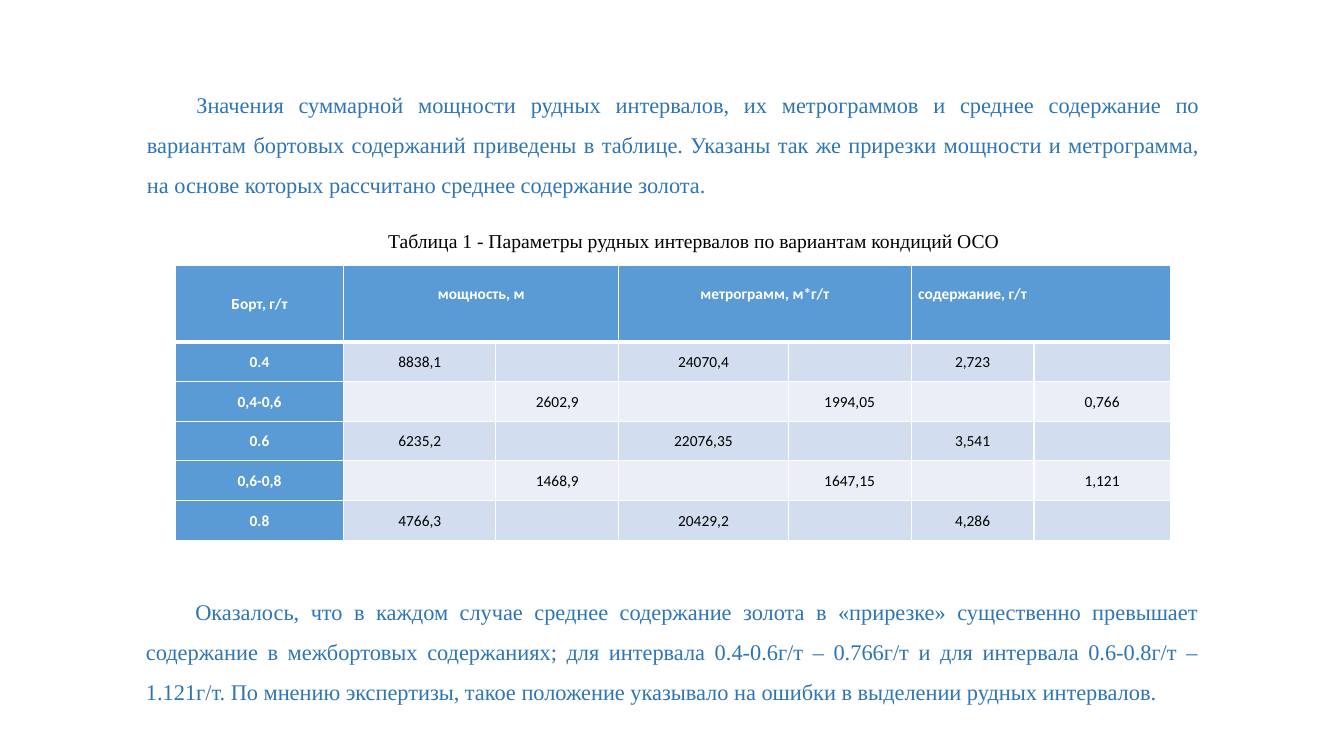
from lxml import etree
from pptx import Presentation
from pptx.dml.color import RGBColor
from pptx.enum.text import MSO_ANCHOR, PP_ALIGN
from pptx.oxml.ns import qn
from pptx.util import Pt

LEFT, CENTER, JUSTIFY = PP_ALIGN.LEFT, PP_ALIGN.CENTER, PP_ALIGN.JUSTIFY
TOP, MIDDLE = MSO_ANCHOR.TOP, MSO_ANCHOR.MIDDLE

# Content
INTRO = ("Значения суммарной мощности рудных интервалов, их метрограммов и среднее "
         "содержание по вариантам бортовых содержаний приведены в таблице. Указаны так же "
         "прирезки мощности и метрограмма, на основе которых рассчитано среднее "
         "содержание золота.")
CAPTION = "Таблица 1 - Параметры рудных интервалов по вариантам кондиций ОСО"
CONCLUSION = ("Оказалось, что в каждом случае среднее содержание золота в «прирезке» "
              "существенно превышает содержание в межбортовых содержаниях; для интервала "
              "0.4-0.6г/т – 0.766г/т и для интервала 0.6-0.8г/т – 1.121г/т. По мнению "
              "экспертизы, такое положение указывало на ошибки в выделении рудных "
              "интервалов.")
HEADERS = ["Борт, г/т", "мощность, м", "метрограмм, м*г/т", "содержание, г/т"]
# Cut-off grade, then thickness, metre-grams and grade
ROWS = [
    ("0.4", "8838,1", "24070,4", "2,723"),
    ("0,4-0,6", "2602,9", "1994,05", "0,766"),
    ("0.6", "6235,2", "22076,35", "3,541"),
    ("0,6-0,8", "1468,9", "1647,15", "1,121"),
    ("0.8", "4766,3", "20429,2", "4,286"),
]

THEME = {
    "body": dict(name="Times New Roman", size=Pt(16), color="2E75B6"),
    "caption": dict(name="Times New Roman", size=Pt(14), color="000000"),
    "head": dict(name="Calibri", size=Pt(11), bold=True, color="FFFFFF"),
    "value": dict(name="Calibri", size=Pt(11), bold=False, color="000000"),
    "head_fill": "5B9BD5",
    "bands": ("D2DEEF", "EAEFF7"),
    "border": "FFFFFF",
}

# Layout, in points
SLIDE_W, SLIDE_H = 960, 540
INTRO_BOX = (97.92, 51.84, 766.08, 91.44)
CAPTION_BOX = (268.56, 159.84, 454.32, 24.48)
CONCLUSION_BOX = (97.2, 414, 766.08, 91.44)
TABLE_LEFT, TABLE_TOP = 125.28, 189.36
COL_WIDTHS = [120.24, 108.72, 87.84, 120.96, 87.84, 87.84, 97.2]
HEAD_HEIGHT, ROW_HEIGHT = 54.72, 28.4
FIRST_INDENT = 35.28
HEAD_LIFT = 14.4


def write(p, text, style, align, spacing):
    p.alignment, p.line_spacing = align, spacing
    r = p.add_run()
    r.text = text
    for key, value in THEME[style].items():
        if key == "color":
            r.font.color.rgb = RGBColor.from_string(value)
        else:
            setattr(r.font, key, value)


def add_text(s, box, text, style, align, spacing=1.0, anchor=TOP, indent=0):
    tf = s.shapes.add_textbox(*map(Pt, box)).text_frame
    tf.word_wrap, tf.vertical_anchor = True, anchor
    p = tf.paragraphs[0]
    write(p, text, style, align, spacing)
    if indent:
        p_pr = p._p.get_or_add_pPr()
        p_pr.set("marL", "0")
        p_pr.set("indent", str(Pt(indent)))


def format_cell(cell, fill, bottom_width=1, lift=0):
    margins = dict(margin_left=5.04, margin_right=5.04, margin_top=0, margin_bottom=lift)
    for key, value in margins.items():
        setattr(cell, key, Pt(value))
    cell.vertical_anchor = MIDDLE
    tc_pr = cell._tc.get_or_add_tcPr()
    for side, width in (("L", 1), ("R", 1), ("T", 1), ("B", bottom_width)):
        line = etree.SubElement(tc_pr, qn(f"a:ln{side}"), w=str(Pt(width)))
        solid = etree.SubElement(line, qn("a:solidFill"))
        etree.SubElement(solid, qn("a:srgbClr"), val=THEME["border"])
    cell.fill.solid()
    cell.fill.fore_color.rgb = RGBColor.from_string(fill)


def add_grade_table(s):
    heights = [HEAD_HEIGHT] + [ROW_HEIGHT] * len(ROWS)
    table = s.shapes.add_table(len(heights), len(COL_WIDTHS), Pt(TABLE_LEFT), Pt(TABLE_TOP),
                               Pt(sum(COL_WIDTHS)), Pt(sum(heights))).table
    for column, width in zip(table.columns, COL_WIDTHS):
        column.width = Pt(width)
    for row, height in zip(table.rows, heights):
        row.height = Pt(height)

    # Header: each measure spans a pair of columns
    for c in range(len(COL_WIDTHS)):
        format_cell(table.cell(0, c), THEME["head_fill"], 3, HEAD_LIFT if c else 0)
    for i, header in enumerate(HEADERS):
        c = max(0, 2 * i - 1)
        cell = table.cell(0, c)
        if i:
            cell.merge(table.cell(0, c + 1))
        align = LEFT if i == len(HEADERS) - 1 else CENTER
        write(cell.text_frame.paragraphs[0], header, "head", align, 1.07)

    # Body: cut-offs fill the left of each pair, intervals the right
    for i, (label, *values) in enumerate(ROWS):
        shift = i % 2
        texts = {0: label} | {1 + 2 * k + shift: v for k, v in enumerate(values)}
        for c in range(len(COL_WIDTHS)):
            cell = table.cell(i + 1, c)
            format_cell(cell, THEME["bands"][shift] if c else THEME["head_fill"])
            if c in texts:
                write(cell.text_frame.paragraphs[0], texts[c],
                      "value" if c else "head", CENTER, 1.07)


def main():
    prs = Presentation()
    prs.slide_width, prs.slide_height = Pt(SLIDE_W), Pt(SLIDE_H)
    s = prs.slides.add_slide(prs.slide_layouts[6])
    add_text(s, INTRO_BOX, INTRO, "body", JUSTIFY, 1.5, indent=FIRST_INDENT)
    add_grade_table(s)
    add_text(s, CAPTION_BOX, CAPTION, "caption", CENTER, anchor=MIDDLE)
    add_text(s, CONCLUSION_BOX, CONCLUSION, "body", JUSTIFY, 1.5, indent=FIRST_INDENT)
    prs.save("out.pptx")


if __name__ == "__main__":
    main()
